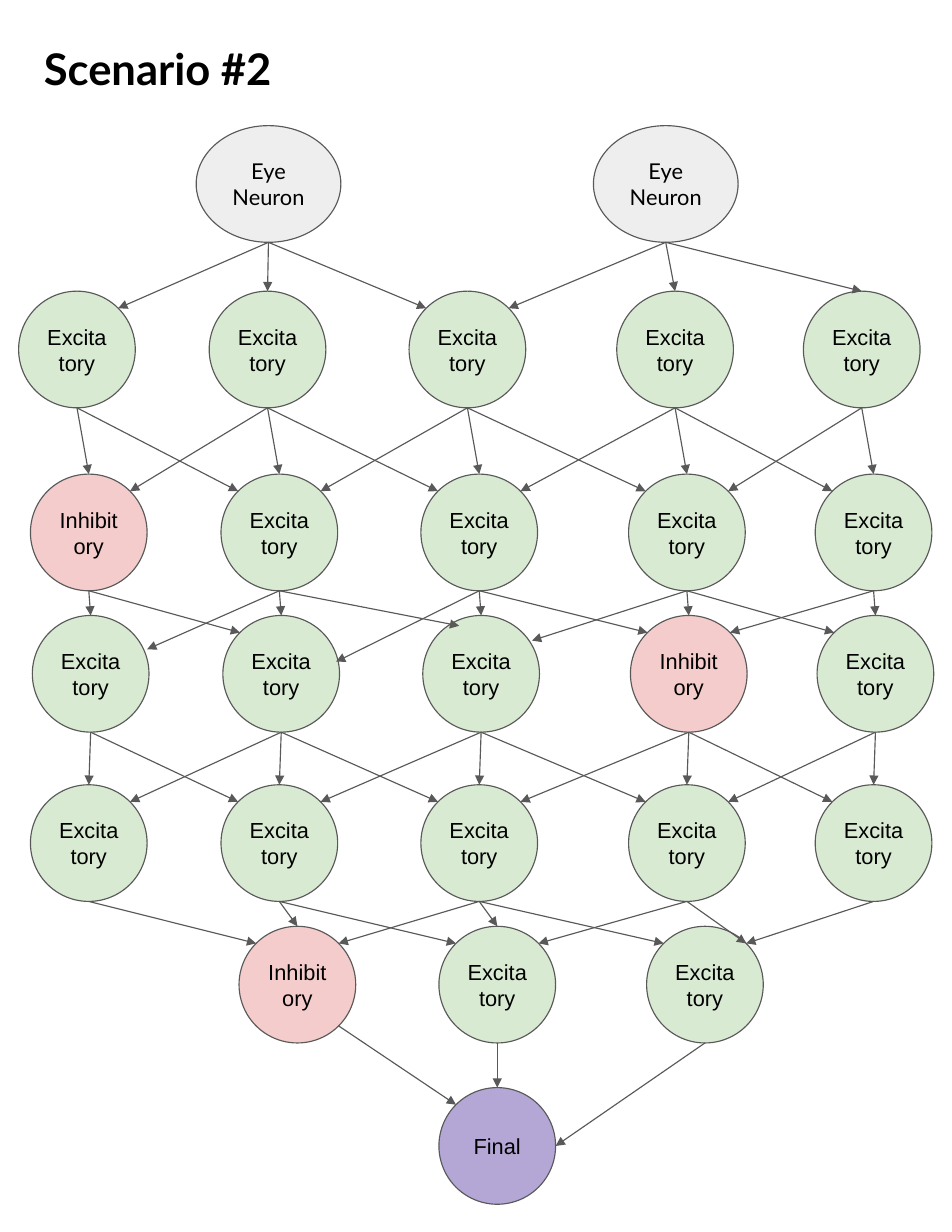
from math import sqrt

from lxml.etree import SubElement
from pptx import Presentation
from pptx.dml.color import RGBColor
from pptx.enum.shapes import MSO_CONNECTOR, MSO_SHAPE
from pptx.enum.text import MSO_ANCHOR, MSO_AUTO_SIZE, PP_ALIGN
from pptx.oxml.ns import qn
from pptx.util import Pt

# Content: each neuron kind has its label, fill, font and width
KINDS = {
    "eye": ("Eye Neuron", "EEEEEE", "Lato", 93),
    "excite": ("Excitatory", "D9EAD3", "Arial", 75),
    "inhibit": ("Inhibitory", "F4CCCC", "Arial", 75),
    "final": ("Final", "B4A7D6", "Arial", 75),
}
COLUMNS = [49.5, 172, 300.5, 434, 554]
# Each layer: top, shift to the right, kind of neuron by column
LAYERS = [
    (80.8, 0, {1: "eye", 3: "eye"}),
    (187.2, 0, {column: "excite" for column in range(5)}),
    (304.8, 7.6, {0: "inhibit", 1: "excite", 2: "excite", 3: "excite", 4: "excite"}),
    (395.7, 8.8, {0: "excite", 1: "excite", 2: "excite", 3: "inhibit", 4: "excite"}),
    (504.5, 7.6, {column: "excite" for column in range(5)}),
    (595.5, 19.2, {1: "inhibit", 2: "excite", 3: "excite"}),
    (699.2, 19.2, {2: "final"}),
]
EYE_SHIFTS = {1: 0.6, 3: -6}
HEIGHT = 75
INK, LINE = "000000", "595959"

# Points on a neuron's rim, as parts of its half width and half height
DIAGONAL = 1 / sqrt(2)
RIM = {
    "top": (0, -1),
    "bottom": (0, 1),
    "right": (1, 0),
    "top left": (-DIAGONAL, -DIAGONAL),
    "top right": (DIAGONAL, -DIAGONAL),
    "bottom right": (DIAGONAL, DIAGONAL),
}
# An arrow comes in on the side its source lies on
ENTRY = {-1: "top left", 0: "top", 1: "top right"}
# Arrows that differ, by source layer, source column and target column
OTHER_ENTRY = {(0, 3, 4): "top", (4, 3, 3): "top right", (5, 3, 2): "right"}
OTHER_EXIT = {(5, 1, 2): "bottom right"}
LOOSE_ENDS = {
    (2, 1, 0): (94.6, 417.4),
    (2, 1, 2): (295.2, 402.3),
    (2, 2, 1): (216, 425.4),
    (2, 3, 2): (342, 411.8),
}


def color(value):
    return RGBColor.from_string(value)


def add_text(frame, text, font, size, align, bold=False):
    frame.word_wrap = True
    frame.auto_size = MSO_AUTO_SIZE.NONE
    frame.margin_left = frame.margin_right = Pt(7.2)
    frame.margin_top = frame.margin_bottom = Pt(7.2)
    para = frame.paragraphs[0]
    para.alignment = align
    span = para.add_run()
    span.text = text
    span.font.name = font
    span.font.size = Pt(size)
    span.font.bold = bold
    span.font.color.rgb = color(INK)


def add_neuron(page, kind, center, top):
    text, fill, font, width = KINDS[kind]
    neuron = page.shapes.add_shape(
        MSO_SHAPE.OVAL, Pt(center - width / 2), Pt(top), Pt(width), Pt(HEIGHT))
    neuron.shadow.inherit = False
    neuron.fill.solid()
    neuron.fill.fore_color.rgb = color(fill)
    neuron.line.color.rgb = color(LINE)
    neuron.line.width = Pt(0.75)
    neuron.text_frame.vertical_anchor = MSO_ANCHOR.MIDDLE
    add_text(neuron.text_frame, text, font, 14, PP_ALIGN.CENTER)
    return center, top + HEIGHT / 2, width / 2


def rim_point(neuron, side):
    x, y, half_width = neuron
    across, down = RIM[side]
    return x + across * half_width, y + down * HEIGHT / 2


def add_arrow(page, start, end):
    arrow = page.shapes.add_connector(
        MSO_CONNECTOR.STRAIGHT, *(Pt(length) for length in (*start, *end)))
    arrow.line.color.rgb = color(LINE)
    arrow.line.width = Pt(0.75)
    properties = arrow.line._get_or_add_ln()
    SubElement(properties, qn("a:tailEnd"), type="triangle")
    SubElement(arrow._element.spPr, qn("a:effectLst"))


def main():
    deck = Presentation()
    deck.slide_width, deck.slide_height = Pt(612), Pt(792)
    page = deck.slides.add_slide(deck.slide_layouts[5])

    # Title
    title = page.shapes.title
    title.left, title.top, title.width, title.height = Pt(21), Pt(19.5), Pt(570), Pt(49)
    title.text_frame.vertical_anchor = MSO_ANCHOR.TOP
    add_text(title.text_frame, "Scenario #2", "Lato", 28, PP_ALIGN.LEFT, bold=True)

    # Neurons, layer by layer
    network = []
    for top, shift, kinds in LAYERS:
        layer = {}
        for column, kind in kinds.items():
            offset = EYE_SHIFTS[column] if kind == "eye" else shift
            layer[column] = add_neuron(page, kind, COLUMNS[column] + offset, top)
        network.append(layer)

    # Arrows to the same and the neighbouring columns of the next layer
    for level, (sources, targets) in enumerate(zip(network, network[1:])):
        for source, neuron in sources.items():
            for target in (source - 1, source, source + 1):
                if target not in targets:
                    continue
                key = (level, source, target)
                start = rim_point(neuron, OTHER_EXIT.get(key, "bottom"))
                side = OTHER_ENTRY.get(key, ENTRY[source - target])
                end = LOOSE_ENDS.get(key) or rim_point(targets[target], side)
                add_arrow(page, start, end)

    deck.save("out.pptx")


if __name__ == "__main__":
    main()
